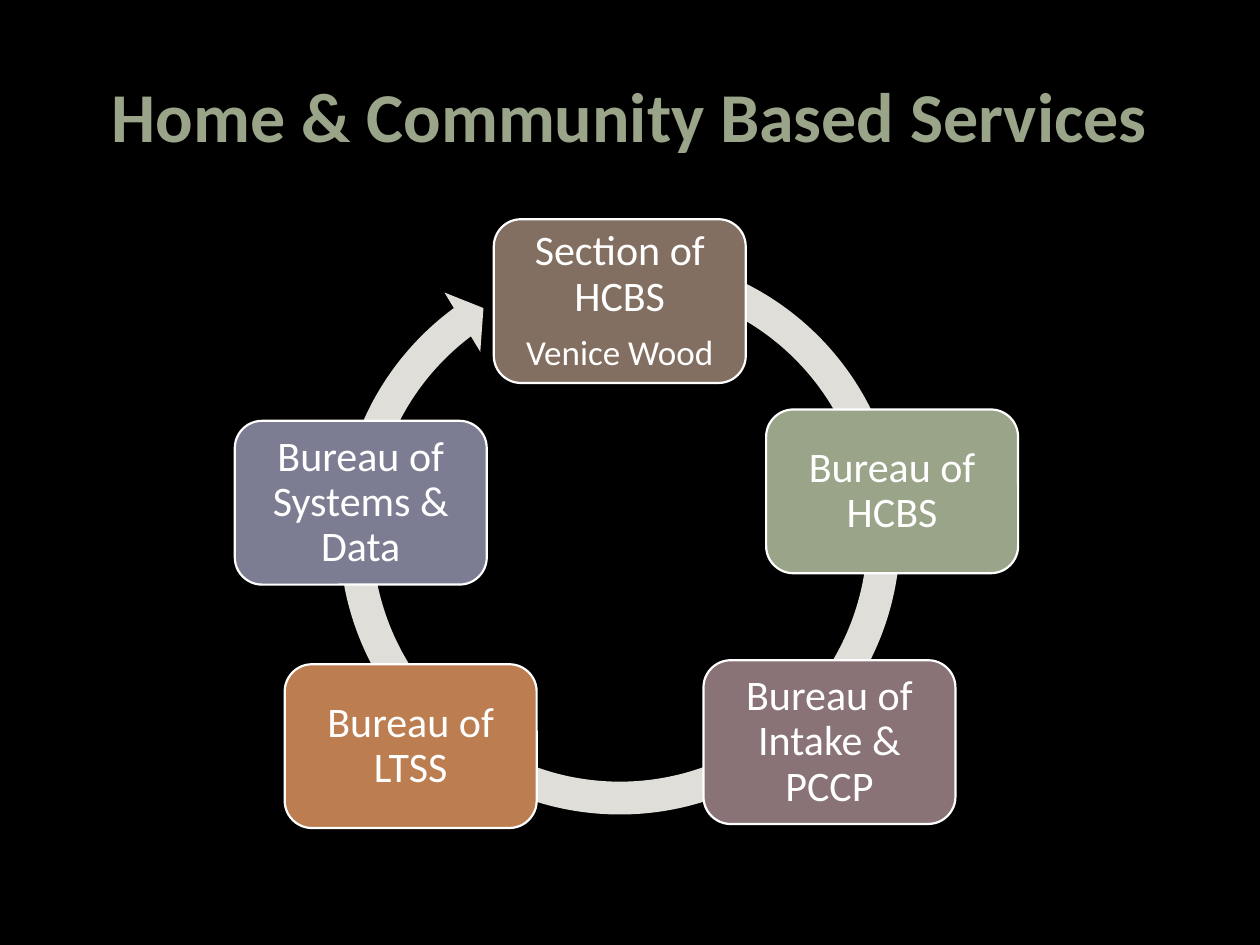
"""Build the Home & Community Based Services cycle slide."""
from dataclasses import dataclass

from pptx import Presentation
from pptx.dml.color import RGBColor
from pptx.enum.shapes import MSO_SHAPE as Preset
from pptx.enum.text import MSO_ANCHOR as Anchor, PP_ALIGN as Align
from pptx.slide import Slide
from pptx.text.text import _Paragraph as Paragraph
from pptx.util import Pt

FONT = "Calibri"
COLORS = {
    "background": "000000",
    "title": "9AA489",
    "ring": "E0DED8",
    "white": "FFFFFF",
    "brown": "826F61",
    "green": "9AA489",
    "mauve": "897376",
    "orange": "BC7D50",
    "blue": "7C7D92",
}
BOX_WIDTH, BOX_HEIGHT, BOX_INSET = 144, 93.6, 11.9
RING_LEFT, RING_TOP, RING_SIZE = 183.6, 134.6, 341.3
RING_ADJUSTMENTS = (0.055, 3.307, 140.029, 172.493, 0.058)
SPACE_AFTER_RATIO = 0.35


@dataclass(frozen=True)
class Unit:
    left: float
    top: float
    color: str
    name: str
    lead: str = ""


UNITS = (
    Unit(282.2, 125.3, "brown", "Section of HCBS", "Venice Wood"),
    Unit(437.8, 234, "green", "Bureau of HCBS"),
    Unit(402, 377.3, "mauve", "Bureau of Intake & PCCP"),
    Unit(162.7, 379.6, "orange", "Bureau of LTSS"),
    Unit(134.2, 240.5, "blue", "Bureau of Systems & Data"),
)


def rgb(name: str) -> RGBColor:
    return RGBColor.from_string(COLORS[name])


def format_paragraph(paragraph: Paragraph, size: float, color: str, bold: bool = False) -> None:
    paragraph.alignment = Align.CENTER
    for run in paragraph.runs:
        run.font.name = FONT
        run.font.size = Pt(size)
        run.font.bold = bold
        run.font.color.rgb = rgb(color)


def format_title(slide: Slide, text: str) -> None:
    title = slide.shapes.title
    title.left, title.top, title.width, title.height = Pt(54), Pt(18), Pt(611.3), Pt(94.3)
    title.text_frame.text = text
    title.text_frame.vertical_anchor = Anchor.MIDDLE
    format_paragraph(title.text_frame.paragraphs[0], 40, "title", bold=True)


def draw_ring(slide: Slide) -> None:
    ring = slide.shapes.add_shape(
        Preset.CIRCULAR_ARROW, Pt(RING_LEFT), Pt(RING_TOP), Pt(RING_SIZE), Pt(RING_SIZE)
    )
    for index, value in enumerate(RING_ADJUSTMENTS):
        ring.adjustments[index] = value
    ring.shadow.inherit = False
    ring.fill.solid()
    ring.fill.fore_color.rgb = rgb("ring")
    ring.line.fill.background()


def draw_unit(slide: Slide, unit: Unit) -> None:
    box = slide.shapes.add_shape(
        Preset.ROUNDED_RECTANGLE, Pt(unit.left), Pt(unit.top), Pt(BOX_WIDTH), Pt(BOX_HEIGHT)
    )
    box.shadow.inherit = False
    box.fill.solid()
    box.fill.fore_color.rgb = rgb(unit.color)
    box.line.color.rgb = rgb("white")
    box.line.width = Pt(1.25)

    frame = box.text_frame
    frame.word_wrap = True
    frame.vertical_anchor = Anchor.MIDDLE
    frame.margin_left = frame.margin_right = Pt(BOX_INSET)
    frame.margin_top = frame.margin_bottom = Pt(BOX_INSET)
    frame.text = "\n".join(filter(None, (unit.name, unit.lead)))
    for paragraph, size in zip(frame.paragraphs, (24, 20)):
        paragraph.line_spacing = 0.9
        paragraph.space_after = Pt(size * SPACE_AFTER_RATIO)
        format_paragraph(paragraph, size, "white")


def main() -> None:
    presentation = Presentation()
    presentation.slide_width, presentation.slide_height = Pt(720), Pt(540)
    slide = presentation.slides.add_slide(presentation.slide_layouts[5])
    slide.background.fill.solid()
    slide.background.fill.fore_color.rgb = rgb("background")
    format_title(slide, "Home & Community Based Services")
    draw_ring(slide)
    for unit in UNITS:
        draw_unit(slide, unit)
    presentation.save("out.pptx")


if __name__ == "__main__":
    main()
